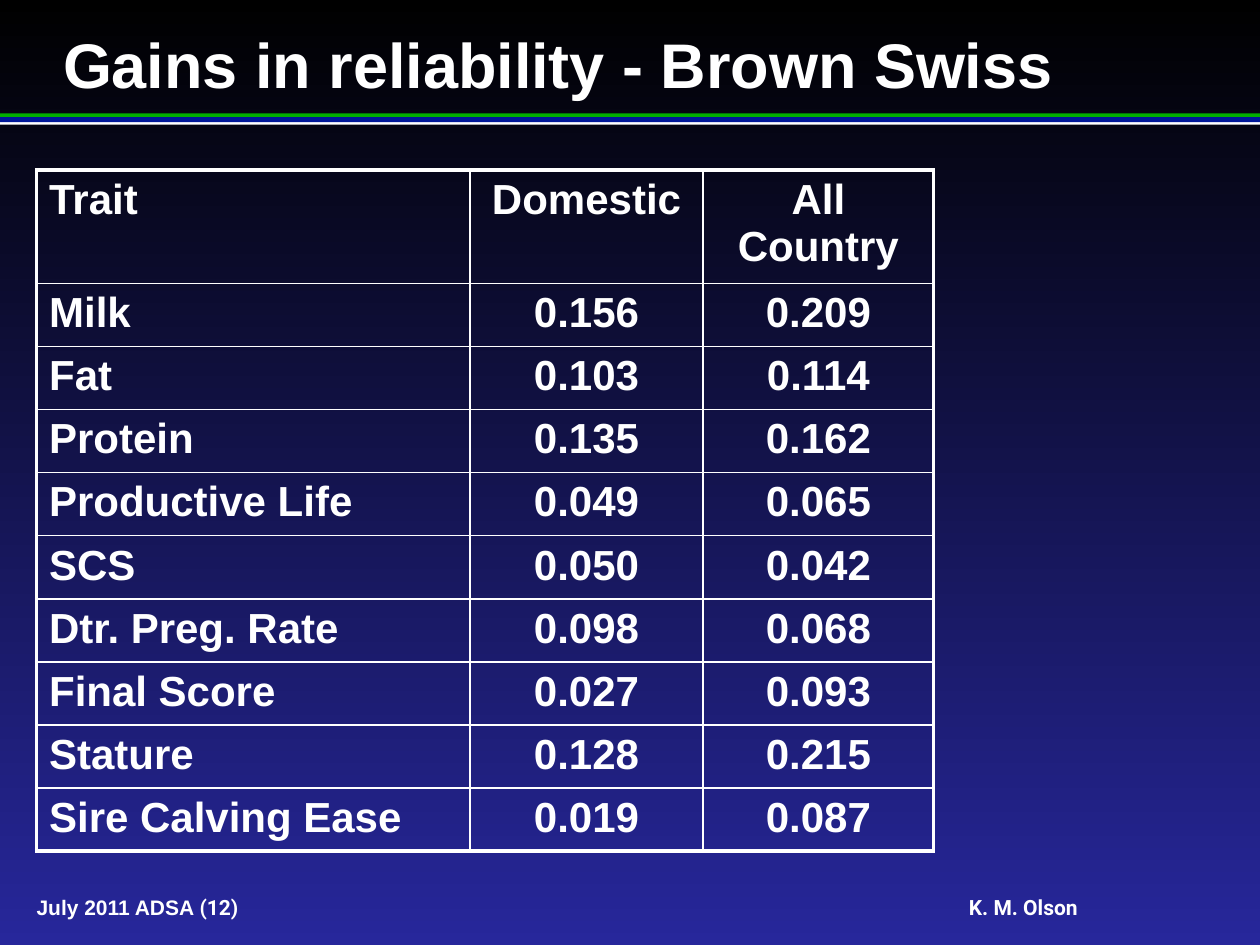
"""Build the Brown Swiss reliability gains slide."""
from dataclasses import dataclass
from lxml.etree import SubElement as Sub
from pptx import Presentation
from pptx.dml.color import RGBColor as Rgb
from pptx.enum.shapes import MSO_SHAPE as Geo
from pptx.enum.text import MSO_ANCHOR as Anchor, PP_ALIGN as Align
from pptx.oxml.ns import qn
from pptx.util import Inches, Pt


@dataclass(frozen=True)
class Theme:
    white: str = "FFFFFF"
    green: str = "01AF00"
    blue: str = "001799"
    top: str = "000000"
    base: str = "27279B"
    font: str = "Arial"
    alt: str = "Roboto"
    head: int = 36
    body: int = 24
    foot: int = 12
    thick: float = 2.25
    thin: float = 1


theme = Theme()


def add_run(para, text, size, font=theme.font):
    run = para.add_run()
    run.text = text
    run.font.name = font
    run.font.size = Pt(size)
    run.font.bold = True
    run.font.color.rgb = Rgb.from_string(theme.white)


def add_edge(cell, side, width):
    line = Sub(cell._tc.get_or_add_tcPr(), qn(f"a:ln{side}"), w=str(Pt(width)))
    Sub(Sub(line, qn("a:solidFill")), qn("a:srgbClr"), val=theme.white)


prs = Presentation()
prs.slide_width, prs.slide_height = Inches(10), Inches(7.5)
slide = prs.slides.add_slide(prs.slide_layouts[5])

back = slide.background.fill
back.gradient()
back.gradient_angle = 270
for stop, color in zip(back.gradient_stops, (theme.top, theme.base)):
    stop.color.rgb = Rgb.from_string(color)

for top, high, color in (
    (0.9, 0.03, theme.green),
    (0.96, 0.03, theme.white),
    (0.93, 0.04, theme.blue),
):
    bar = slide.shapes.add_shape(Geo.RECTANGLE, 0, Inches(top), Inches(10), Inches(high))
    bar.shadow.inherit = False
    bar.fill.solid()
    bar.fill.fore_color.rgb = Rgb.from_string(color)
    bar.line.fill.background()

title = slide.shapes.title
title.left, title.top = Inches(0.5), Inches(0.2)
title.width, title.height = Inches(9), Inches(0.6)
foot = slide.shapes.add_textbox(Inches(0.29), Inches(7.1), Inches(9.45), Inches(0.2))
for box, anchor in ((title, Anchor.BOTTOM), (foot, Anchor.MIDDLE)):
    frame = box.text_frame
    frame.word_wrap = True
    frame.vertical_anchor = anchor
    frame.margin_left = frame.margin_right = 0
    frame.margin_top = frame.margin_bottom = 0
    frame.paragraphs[0].alignment = Align.LEFT

add_run(title.text_frame.paragraphs[0], "Gains in reliability - Brown Swiss", theme.head)

para = foot.text_frame.paragraphs[0]
tabs = Sub(para._p.get_or_add_pPr(), qn("a:tabLst"))
Sub(tabs, qn("a:tab"), pos=str(Inches(7.4)), algn="l")
add_run(para, "July 2011 ADSA ", theme.foot)
add_run(para, "(12)\tK. M. Olson", theme.foot, theme.alt)

data = (
    ("Trait", "Domestic", "All Country"),
    ("Milk", "0.156", "0.209"),
    ("Fat", "0.103", "0.114"),
    ("Protein", "0.135", "0.162"),
    ("Productive Life", "0.049", "0.065"),
    ("SCS", "0.050", "0.042"),
    ("Dtr. Preg. Rate", "0.098", "0.068"),
    ("Final Score", "0.027", "0.093"),
    ("Stature", "0.128", "0.215"),
    ("Sire Calving Ease", "0.019", "0.087"),
)
wide = (3.44, 1.85, 1.83)
last_row, last_col = len(data) - 1, len(wide) - 1
grid = slide.shapes.add_table(
    len(data), len(wide), Inches(0.29), Inches(1.35), Inches(sum(wide)), Inches(5.4)
)
table = grid.table
table.first_row = table.horz_banding = False
for col, width in zip(table.columns, wide):
    col.width = Inches(width)

for r, line in enumerate(data):
    table.rows[r].height = Inches(0.19)
    for c, text in enumerate(line):
        cell = table.cell(r, c)
        outer = {"L": c == 0, "R": c == last_col, "T": r == 0, "B": r == last_row}
        for side, edge in outer.items():
            add_edge(cell, side, theme.thick if edge else theme.thin)
        cell.fill.background()
        para = cell.text_frame.paragraphs[0]
        para.alignment = Align.CENTER if c else Align.LEFT
        add_run(para, text, theme.body)
grid.height = Inches(5.4)

prs.save("out.pptx")
